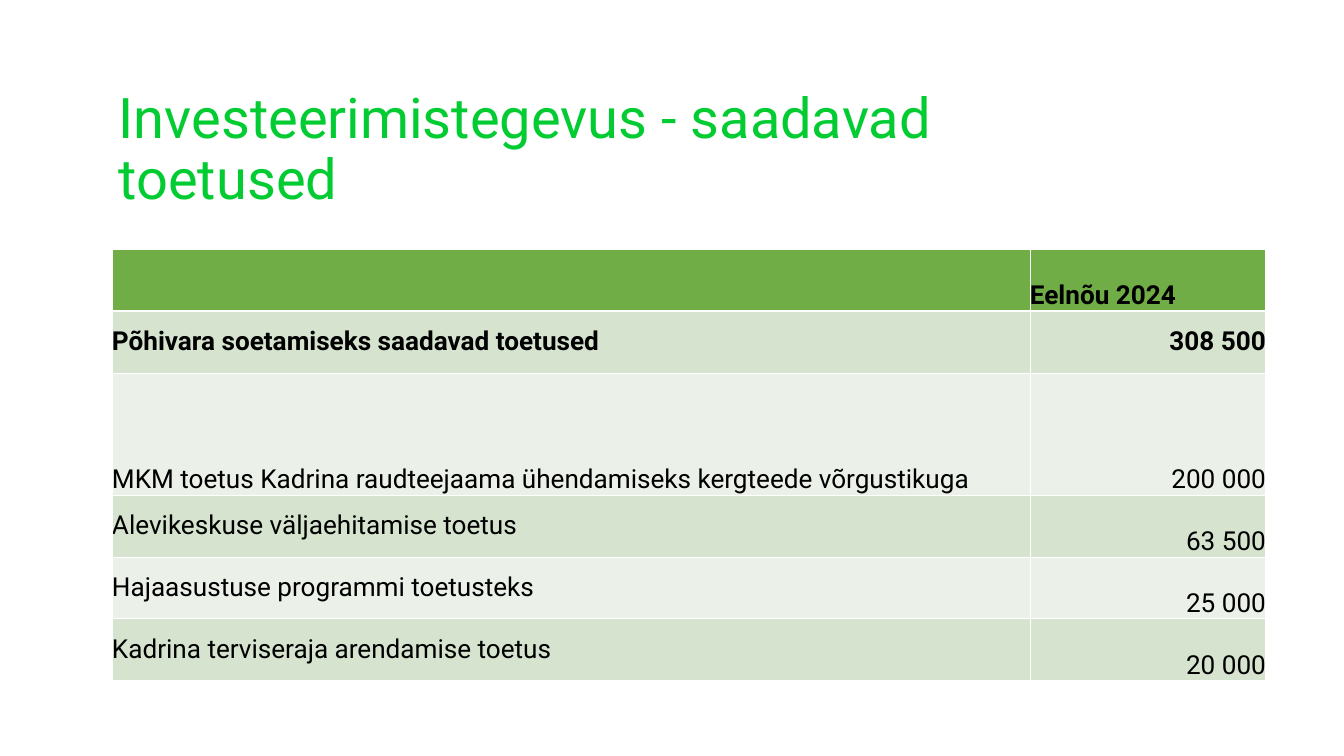
from lxml.etree import SubElement
from pptx import Presentation
from pptx.dml.color import RGBColor
from pptx.enum.text import MSO_ANCHOR as Anchor, MSO_AUTO_SIZE as AutoSize, PP_ALIGN as Align
from pptx.oxml.ns import qn
from pptx.util import Inches, Pt

# Content: label, amount, and vertical anchor of the label
TITLE = "Investeerimistegevus - saadavad toetused"
GRANTS = [
    ("", "Eelnõu 2024", Anchor.BOTTOM),
    ("Põhivara soetamiseks saadavad toetused", "308 500", Anchor.MIDDLE),
    ("MKM toetus Kadrina raudteejaama ühendamiseks kergteede võrgustikuga", "200 000", Anchor.BOTTOM),
    ("Alevikeskuse väljaehitamise toetus", "63 500", Anchor.MIDDLE),
    ("Hajaasustuse programmi toetusteks", "25 000", Anchor.MIDDLE),
    ("Kadrina terviseraja arendamise toetus", "20 000", Anchor.MIDDLE),
]
HEADER, TOTAL, TALL = 0, 1, 2  # rows with their own look

COLORS = {"title": "03CC32", "text": "000000", "rule": "FFFFFF",
          "header": "70AD47", "odd": "D5E3CF", "even": "EBF1E9"}
FONT = "Roboto"

# Layout in inches
SLIDE_W, SLIDE_H = 20, 11.25
LEFT = SLIDE_W / 12
TITLE_TOP, TITLE_W, TITLE_H = 1.29, 13.25, 1.9
TABLE_TOP, ROW_H, TALL_H = 3.71, 0.92, 1.82
COLUMNS = (13.66, 3.51)


def apply(target, formats):
    for name, value in formats.items():
        setattr(target, name, value)


def write(paragraph, text, size, color, bold=False):
    run = paragraph.add_run()
    run.text = text
    apply(run.font, {"name": FONT, "size": Pt(size), "bold": bold})
    run.font.color.rgb = RGBColor.from_string(COLORS[color])


def add_borders(cell, widths):
    properties = cell._tc.get_or_add_tcPr()
    for side, width in widths.items():
        line = SubElement(properties, qn(f"a:ln{side}"), w=str(Pt(width)))
        fill = SubElement(line, qn("a:solidFill"))
        SubElement(fill, qn("a:srgbClr"), val=COLORS["rule"])


def add_title(slide):
    box = slide.shapes.add_textbox(*map(Inches, (LEFT, TITLE_TOP, TITLE_W, TITLE_H)))
    apply(box.text_frame, {"word_wrap": True, "auto_size": AutoSize.SHAPE_TO_FIT_TEXT})
    heading = box.text_frame.paragraphs[0]
    heading.line_spacing = Pt(64.4)
    write(heading, TITLE, 60, "title")


def add_grants(slide):
    heights = [TALL_H if row == TALL else ROW_H for row in range(len(GRANTS))]
    area = (LEFT, TABLE_TOP, sum(COLUMNS), sum(heights))
    table = slide.shapes.add_table(len(GRANTS), len(COLUMNS), *map(Inches, area)).table
    for column, width in zip(table.columns, COLUMNS):
        column.width = Inches(width)

    for row, (label, amount, label_anchor) in enumerate(GRANTS):
        table.rows[row].height = Inches(heights[row])
        band = "header" if row == HEADER else "odd" if row % 2 else "even"
        amount_anchor = Anchor.MIDDLE if row == TOTAL else Anchor.BOTTOM
        amount_align = Align.LEFT if row == HEADER else Align.RIGHT
        parts = ((label, label_anchor, Align.LEFT), (amount, amount_anchor, amount_align))
        for col, (text, anchor, align) in enumerate(parts):
            cell = table.cell(row, col)
            # The rule under the header is thicker
            add_borders(cell, {"L": 1, "R": 1, "T": 3 if row == TOTAL else 1,
                               "B": 3 if row == HEADER else 1})
            cell.fill.solid()
            cell.fill.fore_color.rgb = RGBColor.from_string(COLORS[band])
            apply(cell, {"vertical_anchor": anchor, "margin_left": 0, "margin_right": 0,
                         "margin_top": 0, "margin_bottom": 0})
            if text:
                paragraph = cell.text_frame.paragraphs[0]
                paragraph.alignment = align
                write(paragraph, text, 28, "text", bold=row in (HEADER, TOTAL))


def main():
    deck = Presentation()
    apply(deck, {"slide_width": Inches(SLIDE_W), "slide_height": Inches(SLIDE_H)})
    slide = deck.slides.add_slide(deck.slide_layouts[6])
    add_title(slide)
    add_grants(slide)
    deck.save("out.pptx")


if __name__ == "__main__":
    main()
